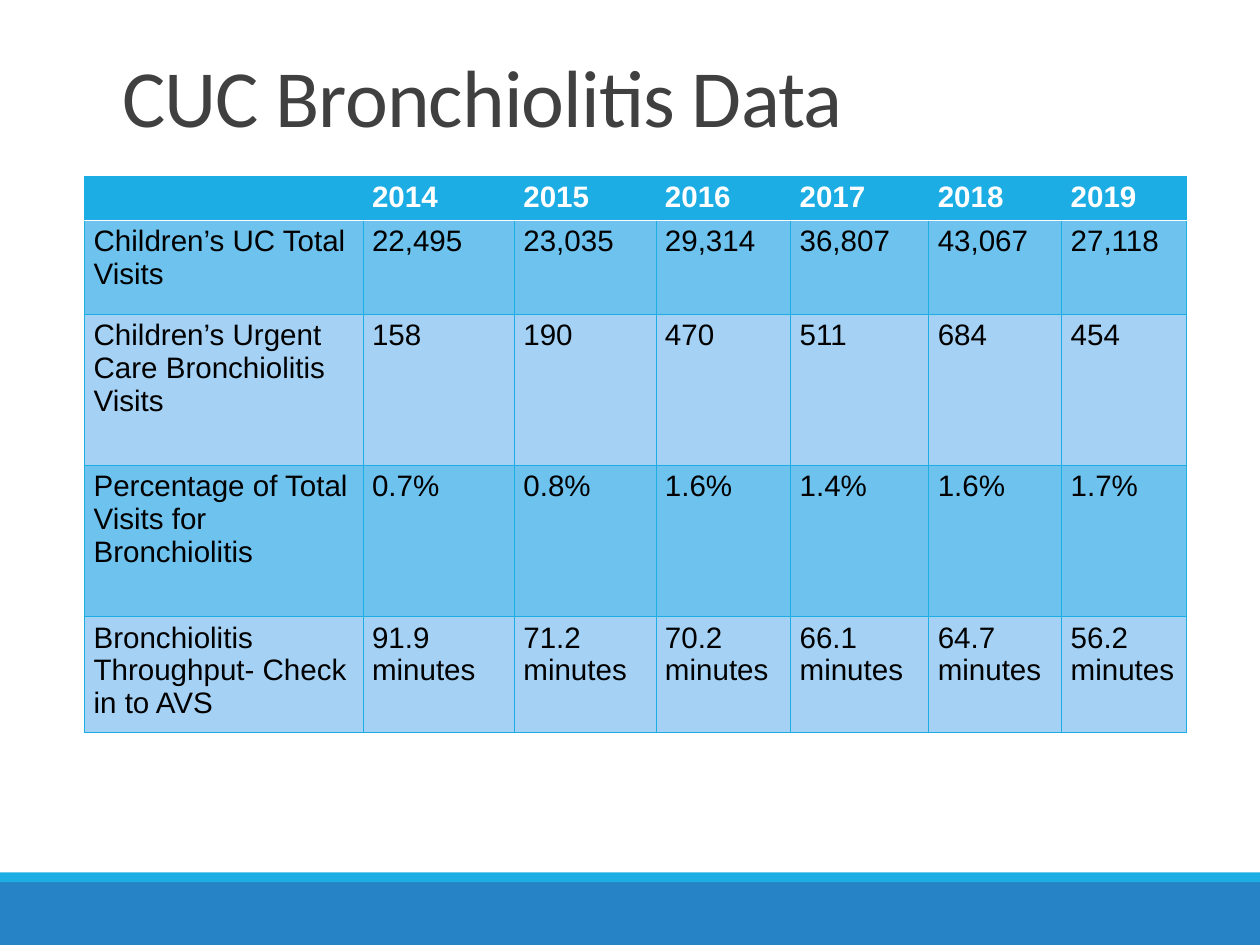
"""Build the CUC bronchiolitis data slide."""
from dataclasses import dataclass

from lxml.etree import SubElement
from pptx import Presentation
from pptx.dml.color import RGBColor
from pptx.enum.shapes import MSO_SHAPE
from pptx.enum.text import MSO_ANCHOR
from pptx.oxml.ns import qn
from pptx.slide import Slide
from pptx.table import _Cell
from pptx.text.text import Font
from pptx.util import Cm, Pt

COLOURS = {
    "accent": "1CADE4",
    "footer": "2683C6",
    "title": "404040",
    "header_text": "FFFFFF",
    "body_text": "000000",
    "dark_band": "6EC2EE",
    "light_band": "A4D1F4",
    "divider": "FFFFFF",
}
TITLE_FORMAT = {"name": "Calibri", "size": Pt(66)}
HEADER_FORMAT = {"name": "Arial", "size": Pt(24), "bold": True}
BODY_FORMAT = {"name": "Arial", "size": Pt(24), "bold": False}
COLUMN_WIDTHS = (7.98, 4.34, 4.06, 3.86, 3.96, 3.81, 3.58)


@dataclass(frozen=True)
class Stripe:
    top: float
    height: float
    colour: str


@dataclass(frozen=True)
class Measure:
    label: str
    values: tuple[str, ...]
    height: float


STRIPES = (Stripe(25.3, 1.8, "footer"), Stripe(25.02, 0.28, "accent"))
YEARS = Measure("", tuple(str(year) for year in range(2014, 2020)), 1.22)
MEASURES = (
    Measure("Children’s UC Total Visits",
            ("22,495", "23,035", "29,314", "36,807", "43,067", "27,118"), 2.69),
    Measure("Children’s Urgent Care Bronchiolitis Visits",
            ("158", "190", "470", "511", "684", "454"), 4.34),
    Measure("Percentage of Total Visits for Bronchiolitis",
            ("0.7%", "0.8%", "1.6%", "1.4%", "1.6%", "1.7%"), 4.34),
    Measure("Bronchiolitis Throughput- Check in to AVS",
            tuple(f"{time} minutes" for time in (91.9, 71.2, 70.2, 66.1, 64.7, 56.2)), 3.23),
)


def rgb(colour: str) -> RGBColor:
    return RGBColor.from_string(COLOURS[colour])


def style_font(font: Font, values: dict, colour: str) -> None:
    for attribute, value in values.items():
        setattr(font, attribute, value)
    font.color.rgb = rgb(colour)


def draw_stripe(slide: Slide, stripe: Stripe, width: int) -> None:
    band = slide.shapes.add_shape(
        MSO_SHAPE.RECTANGLE, 0, Cm(stripe.top), width, Cm(stripe.height))
    band.shadow.inherit = False
    band.fill.solid()
    band.fill.fore_color.rgb = rgb(stripe.colour)
    band.line.fill.background()


def draw_title(slide: Slide, heading: str) -> None:
    frame = slide.shapes.add_textbox(Cm(3.25), Cm(1.14), Cm(29.8), Cm(3.12)).text_frame
    frame.word_wrap = True
    frame.vertical_anchor = MSO_ANCHOR.BOTTOM
    paragraph = frame.paragraphs[0]
    paragraph.line_spacing = 0.85
    run = paragraph.add_run()
    run.text = heading
    style_font(run.font, TITLE_FORMAT, "title")
    run.font._element.set("spc", "-70")


def draw_border(cell: _Cell, side: str, colour: str, points: float) -> None:
    edge = SubElement(cell._tc.get_or_add_tcPr(), qn(f"a:ln{side}"), w=str(Pt(points)))
    SubElement(SubElement(edge, qn("a:solidFill")), qn("a:srgbClr"), val=COLOURS[colour])


def draw_cell(cell: _Cell, text: str, row: int) -> None:
    divided_side = {0: "B", 1: "T"}.get(row)
    for side in "LRTB":
        if side == divided_side:
            draw_border(cell, side, "divider", 1.25)
        else:
            draw_border(cell, side, "accent", 1)
    cell.fill.solid()
    band = "dark_band" if row % 2 else "light_band"
    cell.fill.fore_color.rgb = rgb(band if row else "accent")
    cell.text = text
    style_font(cell.text_frame.paragraphs[0].font,
               BODY_FORMAT if row else HEADER_FORMAT,
               "body_text" if row else "header_text")


def draw_table(slide: Slide, measures: tuple[Measure, ...]) -> None:
    table = slide.shapes.add_table(
        len(measures), len(COLUMN_WIDTHS), Cm(2.43), Cm(5.05),
        Cm(sum(COLUMN_WIDTHS)), Cm(sum(measure.height for measure in measures))).table
    for column, width in zip(table.columns, COLUMN_WIDTHS):
        column.width = Cm(width)
    for row, measure in enumerate(measures):
        table.rows[row].height = Cm(measure.height)
        for column, text in enumerate((measure.label, *measure.values)):
            draw_cell(table.cell(row, column), text, row)


def main() -> None:
    presentation = Presentation()
    presentation.slide_width, presentation.slide_height = Cm(36.12), Cm(27.1)
    slide = presentation.slides.add_slide(presentation.slide_layouts[6])
    for stripe in STRIPES:
        draw_stripe(slide, stripe, presentation.slide_width)
    draw_title(slide, "CUC Bronchiolitis Data")
    draw_table(slide, (YEARS, *MEASURES))
    presentation.save("out.pptx")


if __name__ == "__main__":
    main()
